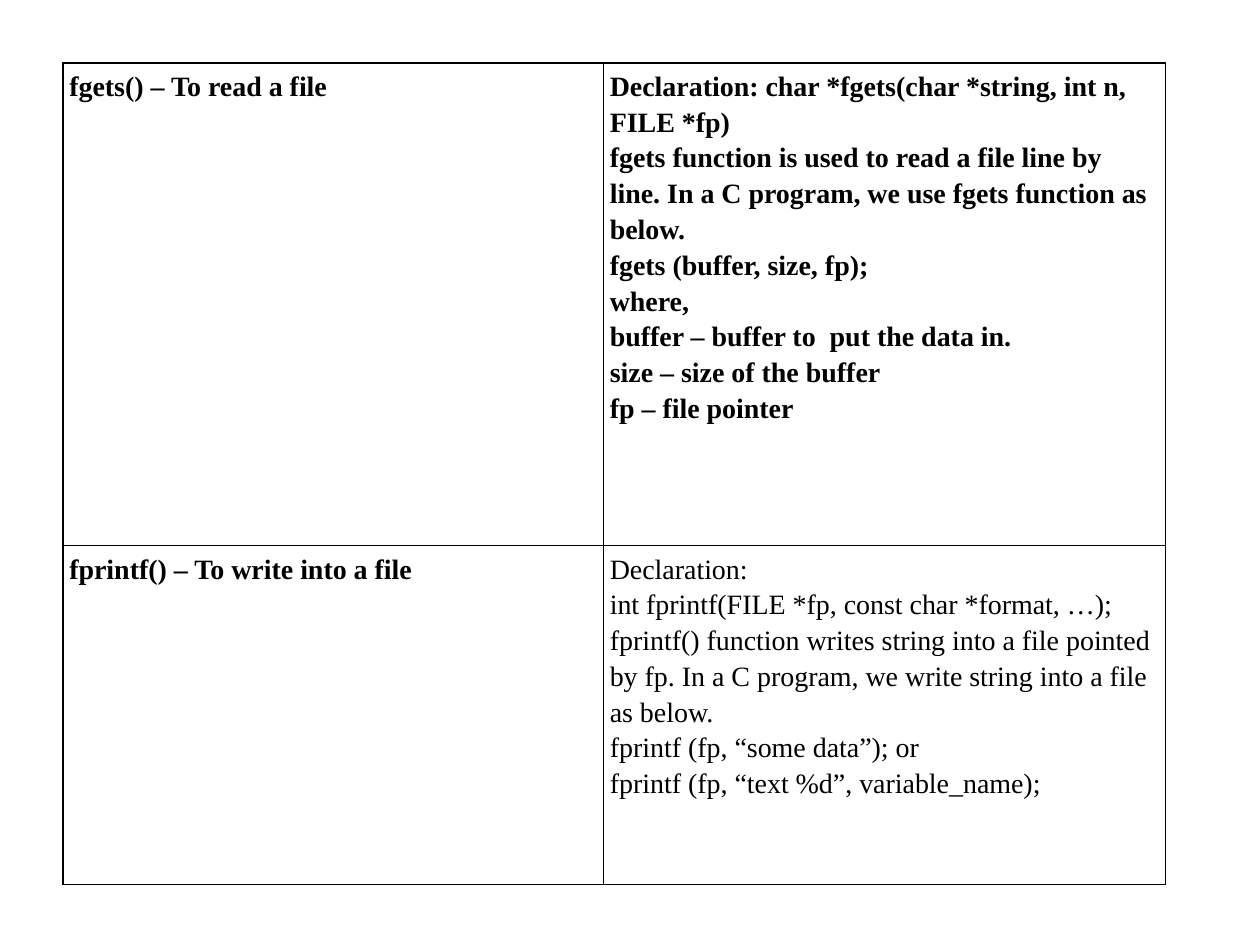
from lxml import etree
from pptx import Presentation
from pptx.dml.color import RGBColor
from pptx.oxml.ns import qn
from pptx.util import Inches, Pt

SLIDE_W, SLIDE_H = 10, 7.5
BORDER_TAGS = ("a:lnL", "a:lnR", "a:lnT", "a:lnB")

# Each row: function and purpose, paragraphs of its description, bold description
FILE_FUNCTIONS = [
    (
        "fgets() – To read a file",
        [
            "Declaration: char *fgets(char *string, int n, FILE *fp)",
            "fgets function is used to read a file line by line. In a C program, "
            "we use fgets function as below.\nfgets (buffer, size, fp);",
            "where,\nbuffer – buffer to  put the data in.\n"
            "size – size of the buffer\nfp – file pointer",
        ],
        True,
    ),
    (
        "fprintf() – To write into a file",
        [
            "Declaration:\nint fprintf(FILE *fp, const char *format, …);",
            "fprintf() function writes string into a file pointed by fp. "
            "In a C program, we write string into a file as below.\n"
            "fprintf (fp, “some data”); or\n"
            "fprintf (fp, “text %d”, variable_name);",
        ],
        False,
    ),
]


def color(hex_value):
    return RGBColor.from_string(hex_value)


class SlideBuilder:
    font = "Times New Roman"
    size = 16
    ink = "000000"
    line_spacing = 1.15
    border_width = 1
    margin_x, margin_y = 0.05, 0.03

    def __init__(self, slide):
        self.slide = slide

    def table(self, left, top, col_shares, row_shares):
        """Add a plain table; all lengths are shares of the slide's size."""
        widths = [Inches(share * SLIDE_W) for share in col_shares]
        heights = [Inches(share * SLIDE_H) for share in row_shares]
        table = self.slide.shapes.add_table(
            len(heights), len(widths),
            Inches(left * SLIDE_W), Inches(top * SLIDE_H),
            sum(widths), sum(heights),
        ).table
        table.first_row = table.horz_banding = False
        for column, width in zip(table.columns, widths):
            column.width = width
        for row, height in zip(table.rows, heights):
            row.height = height
        return table

    def cell(self, cell, paragraphs, bold, last_gap=0):
        """Fill a cell with text, margins and borders."""
        cell.margin_left = cell.margin_right = Inches(self.margin_x)
        cell.margin_top = cell.margin_bottom = Inches(self.margin_y)
        self.borders(cell)
        cell.fill.background()
        frame = cell.text_frame
        for index, text in enumerate(paragraphs):
            paragraph = frame.add_paragraph() if index else frame.paragraphs[0]
            paragraph.text = text
            paragraph.line_spacing = self.line_spacing
            for run in paragraph.runs:
                run.font.name = self.font
                run.font.size = Pt(self.size)
                run.font.bold = bold
                run.font.color.rgb = color(self.ink)
            # Line breaks need the text size too, to keep the line height
            for line_break in paragraph._p.findall(qn("a:br")):
                etree.SubElement(line_break, qn("a:rPr"), sz=str(self.size * 100))
        paragraph.space_after = Pt(last_gap)

    def borders(self, cell):
        properties = cell._tc.get_or_add_tcPr()
        for tag in BORDER_TAGS:
            line = etree.SubElement(properties, qn(tag), w=str(Pt(self.border_width)))
            fill = etree.SubElement(line, qn("a:solidFill"))
            etree.SubElement(fill, qn("a:srgbClr"), val=self.ink)


def main():
    presentation = Presentation()
    presentation.slide_width = Inches(SLIDE_W)
    presentation.slide_height = Inches(SLIDE_H)
    blank = presentation.slide_layouts[6]
    builder = SlideBuilder(presentation.slides.add_slide(blank))

    # Table of file functions: purpose on the left, description on the right
    functions = builder.table(
        0.05, 0.5 / SLIDE_H,
        col_shares=(4.29 / SLIDE_W, 4.46 / SLIDE_W),
        row_shares=(3.83 / SLIDE_H, 2.69 / SLIDE_H),
    )
    for row, (purpose, description, bold) in enumerate(FILE_FUNCTIONS):
        builder.cell(functions.cell(row, 0), [purpose], True)
        builder.cell(functions.cell(row, 1), description, bold,
                     last_gap=15.3 if row == 0 else 0)

    presentation.save("out.pptx")


if __name__ == "__main__":
    main()
